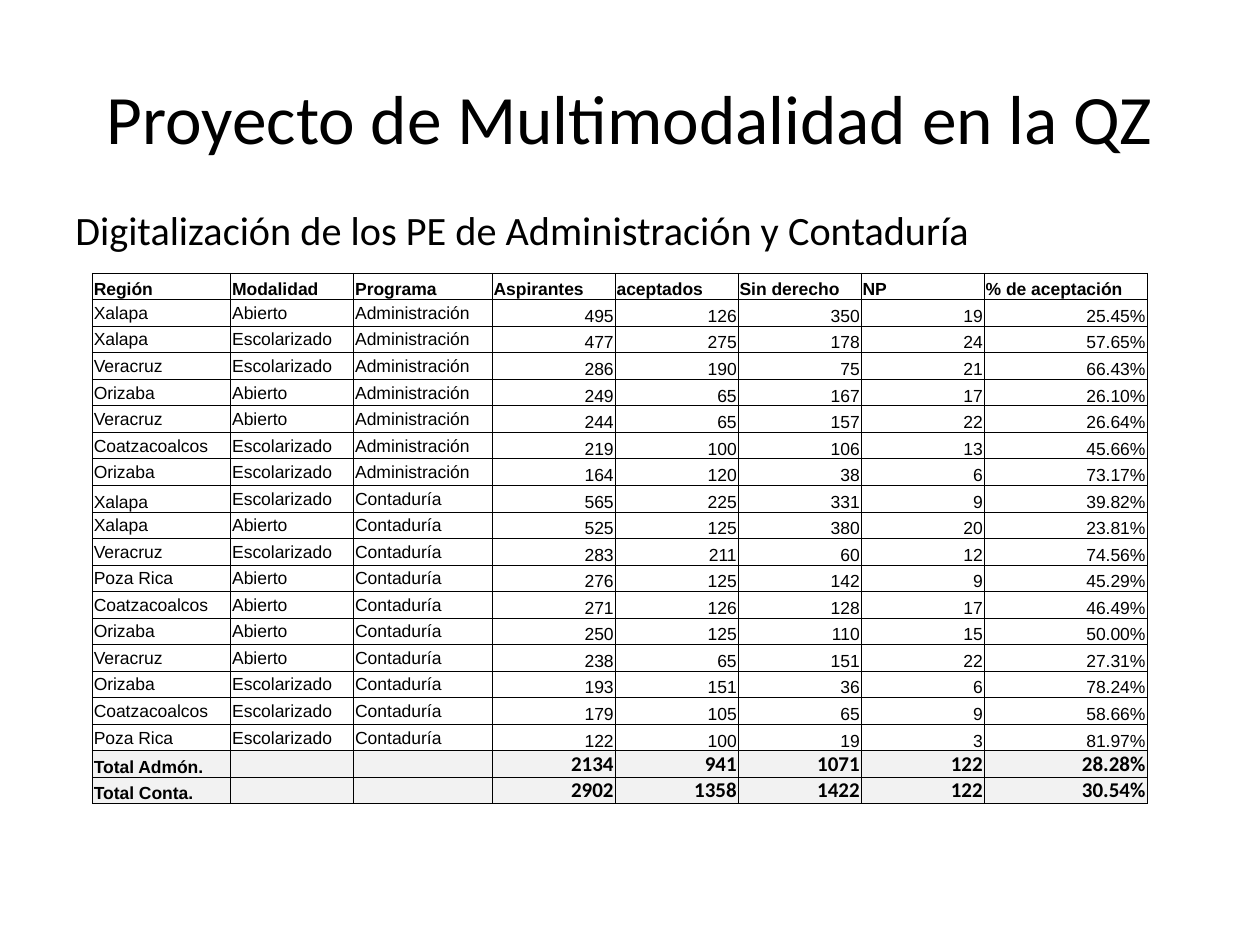
import pptx
import pptx.dml.color
import pptx.enum.text
import pptx.oxml
import pptx.oxml.ns
import pptx.util

Cm, Pt = pptx.util.Cm, pptx.util.Pt
ALIGN, ANCHOR = pptx.enum.text.PP_ALIGN, pptx.enum.text.MSO_ANCHOR

TITLE = "Proyecto de Multimodalidad en la QZ"
SUBTITLE = "Digitalización de los PE de Administración y Contaduría"
HEADER = ("Región", "Modalidad", "Programa", "Aspirantes", "aceptados",
          "Sin derecho", "NP", "% de aceptación")
ADMISSIONS = {
    "Administración": [
        ("Xalapa", "Abierto", 495, 126, 350, 19, "25.45%"),
        ("Xalapa", "Escolarizado", 477, 275, 178, 24, "57.65%"),
        ("Veracruz", "Escolarizado", 286, 190, 75, 21, "66.43%"),
        ("Orizaba", "Abierto", 249, 65, 167, 17, "26.10%"),
        ("Veracruz", "Abierto", 244, 65, 157, 22, "26.64%"),
        ("Coatzacoalcos", "Escolarizado", 219, 100, 106, 13, "45.66%"),
        ("Orizaba", "Escolarizado", 164, 120, 38, 6, "73.17%"),
    ],
    "Contaduría": [
        ("Xalapa", "Escolarizado", 565, 225, 331, 9, "39.82%"),
        ("Xalapa", "Abierto", 525, 125, 380, 20, "23.81%"),
        ("Veracruz", "Escolarizado", 283, 211, 60, 12, "74.56%"),
        ("Poza Rica", "Abierto", 276, 125, 142, 9, "45.29%"),
        ("Coatzacoalcos", "Abierto", 271, 126, 128, 17, "46.49%"),
        ("Orizaba", "Abierto", 250, 125, 110, 15, "50.00%"),
        ("Veracruz", "Abierto", 238, 65, 151, 22, "27.31%"),
        ("Orizaba", "Escolarizado", 193, 151, 36, 6, "78.24%"),
        ("Coatzacoalcos", "Escolarizado", 179, 105, 65, 9, "58.66%"),
        ("Poza Rica", "Escolarizado", 122, 100, 19, 3, "81.97%"),
    ],
}
TOTALS = [
    ("Total Admón.", "", "", 2134, 941, 1071, 122, "28.28%"),
    ("Total Conta.", "", "", 2902, 1358, 1422, 122, "30.54%"),
]
COLUMN_WIDTHS = (2.79, 2.48, 2.79, 2.48, 2.48, 2.48, 2.48, 3.28)  # cm
TABLE_HEIGHT = 10.6  # cm
LABEL_COLUMNS = 3
BLACK, TOTAL_FILL = "000000", "F2F2F2"


def color(value):
    return pptx.dml.color.RGBColor.from_string(value)


def style(para, name, size, bold=False, align=ALIGN.LEFT):
    para.alignment = align
    font = para.font
    font.name, font.size, font.bold = name, Pt(size), bold
    font.color.rgb = color(BLACK)


def add_text(page, text, place, size, align, anchor):
    box = page.shapes.add_textbox(*map(Cm, place))
    frame = box.text_frame
    frame.word_wrap = True
    frame.vertical_anchor = anchor
    frame.text = text
    style(frame.paragraphs[0], "Calibri", size, align=align)


def add_borders(cell):
    properties = cell._tc.get_or_add_tcPr()
    for side in ("lnL", "lnR", "lnT", "lnB"):
        properties.append(pptx.oxml.parse_xml(
            f'<a:{side} {pptx.oxml.ns.nsdecls("a")} w="{Pt(0.5)}"><a:solidFill>'
            f'<a:srgbClr val="{BLACK}"/></a:solidFill></a:{side}>'))


def fill_cell(cell, value, column, is_header, is_total, tall_inset):
    is_number = column >= LABEL_COLUMNS and not is_header
    cell.vertical_anchor = ANCHOR.BOTTOM
    cell.margin_left = cell.margin_right = Cm(0.03)
    cell.margin_top = Cm(0.05 if tall_inset else 0.02)
    cell.margin_bottom = Cm(0.06 if tall_inset else 0)
    add_borders(cell)
    if is_total:
        cell.fill.solid()
        cell.fill.fore_color.rgb = color(TOTAL_FILL)
    else:
        cell.fill.background()
    cell.text = str(value)
    name, size = ("Calibri", 12) if is_total and is_number else ("Arial", 10)
    style(cell.text_frame.paragraphs[0], name, size, is_header or is_total,
          ALIGN.RIGHT if is_number else ALIGN.LEFT)


def add_admissions_table(page):
    # Programme goes in as the third column of each record
    records = [(region, mode, program, *figures)
               for program, entries in ADMISSIONS.items()
               for region, mode, *figures in entries]
    rows = [HEADER, *records, *TOTALS]
    first_total = len(rows) - len(TOTALS)
    low_label = 1 + len(ADMISSIONS["Administración"])  # region set on the cell floor

    table = page.shapes.add_table(
        len(rows), len(HEADER), Cm(1.86), Cm(5.51),
        Cm(sum(COLUMN_WIDTHS)), Cm(TABLE_HEIGHT)).table
    table.first_row = table.horz_banding = False
    for column, width in zip(table.columns, COLUMN_WIDTHS):
        column.width = Cm(width)
    for r, values in enumerate(rows):
        table.rows[r].height = Cm(TABLE_HEIGHT / len(rows))
        for c, value in enumerate(values):
            tall_inset = (0 < r < first_total and c < LABEL_COLUMNS
                          and (r, c) != (low_label, 0))
            fill_cell(table.cell(r, c), value, c, r == 0, r >= first_total, tall_inset)


deck = pptx.Presentation()
deck.slide_width, deck.slide_height = Cm(25.4), Cm(19.05)
page = deck.slides.add_slide(deck.slide_layouts[6])

# Headings
add_text(page, TITLE, (1.27, 0.76, 22.86, 3.18), 39.6, ALIGN.CENTER, ANCHOR.MIDDLE)
add_text(page, SUBTITLE, (1.27, 4.01, 22.86, 1.3), 23, ALIGN.LEFT, ANCHOR.TOP)

# Admissions by region, mode and programme
add_admissions_table(page)

deck.save("out.pptx")
